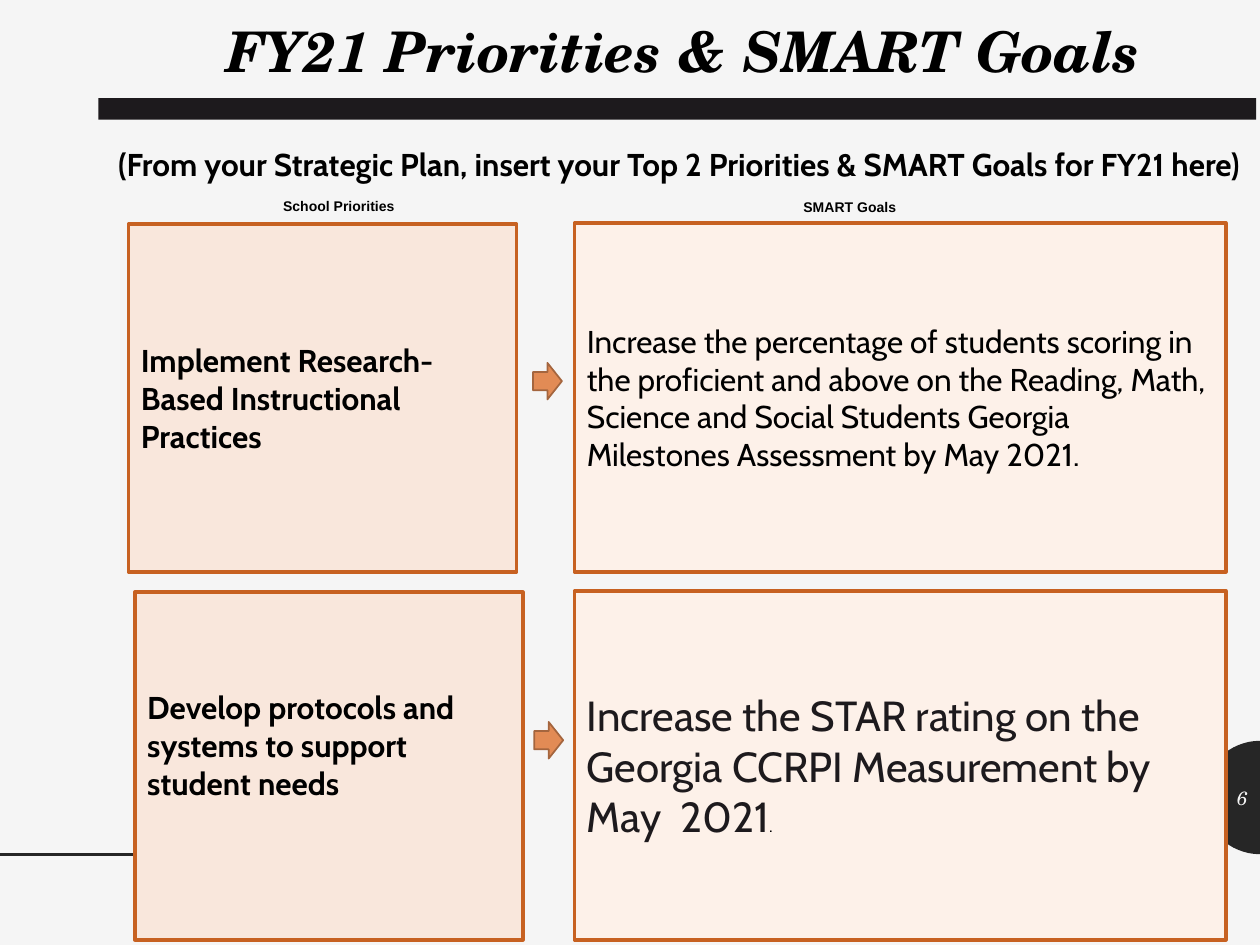
from math import cos, pi, sin

from pptx import Presentation
from pptx.dml.color import RGBColor
from pptx.enum.shapes import MSO_CONNECTOR, MSO_SHAPE
from pptx.enum.text import MSO_ANCHOR as ANCHOR, PP_ALIGN as ALIGN
from pptx.oxml.ns import qn
from pptx.util import Inches, Pt

BACKGROUND = RGBColor(0xF5, 0xF5, 0xF5)
CHARCOAL = RGBColor(0x26, 0x26, 0x26)
INK = RGBColor(0x1D, 0x1A, 0x1D)
BLACK = RGBColor(0, 0, 0)
PRIORITY_FILL = RGBColor(0xF9, 0xE7, 0xDC)
GOAL_FILL = RGBColor(0xFD, 0xF1, 0xE9)
BOX_LINE = RGBColor(0xC7, 0x61, 0x21)
ARROW_FILL = RGBColor(0xE2, 0x8B, 0x55)
ARROW_LINE = RGBColor(0xA4, 0x65, 0x3E)
SERIF, SANS, LABEL = "TeX Gyre Schola", "Cabin", "Arial"


def paint(shape, fill, line=None, width=1):
    shape.shadow.inherit = False
    shape.fill.solid()
    shape.fill.fore_color.rgb = fill
    if line is None:
        shape.line.fill.background()
    else:
        shape.line.color.rgb = line
        shape.line.width = Pt(width)


def write(shape, runs, align=ALIGN.LEFT, anchor=ANCHOR.TOP):
    """Fill one paragraph with runs of (text, size, font, color, bold, italic)."""
    frame = shape.text_frame
    frame.word_wrap = True
    frame.vertical_anchor = anchor
    paragraph = frame.paragraphs[0]
    paragraph.alignment = align
    for text, size, font, color, bold, italic in runs:
        run = paragraph.add_run()
        run.text = text
        run.font.size = Pt(size)
        run.font.name = font
        run.font.color.rgb = color
        run.font.bold = bold
        run.font.italic = italic


prs = Presentation()
prs.slide_width, prs.slide_height = Inches(10), Inches(7.5)
slide = prs.slides.add_slide(prs.slide_layouts[6])
slide.background.fill.solid()
slide.background.fill.fore_color.rgb = BACKGROUND
shapes = slide.shapes

# Half disc behind the page number
STEPS, RADIUS = 32, 0.45
arc = [
    (Inches(10 - RADIUS * sin(pi * i / STEPS)), Inches(6.33 - RADIUS * cos(pi * i / STEPS)))
    for i in range(STEPS + 1)
]
builder = shapes.build_freeform(*arc[0])
builder.add_line_segments(arc[1:], close=True)
paint(builder.convert_to_shape(), CHARCOAL)

footer_rule = shapes.add_connector(
    MSO_CONNECTOR.STRAIGHT, Inches(0), Inches(6.78), Inches(3.69), Inches(6.78))
footer_rule.line.color.rgb = CHARCOAL
footer_rule.line.width = Pt(2)
properties = footer_rule._element.spPr
properties.append(properties.makeelement(qn("a:effectLst"), {}))

title_bar = shapes.add_shape(
    MSO_SHAPE.RECTANGLE, Inches(0.78), Inches(0.78), Inches(9.19), Inches(0.17))
paint(title_bar, INK)

# Headings: left, top, width, height, text, size, font, italic
headings = [
    (0.96, 0.08, 8.93, 0.64, "FY21 Priorities & SMART Goals", 32, SERIF, True),
    (0.78, 1.1, 9.22, 0.71,
     "(From your Strategic Plan, insert your Top 2 Priorities & SMART Goals for FY21 here)",
     18, SANS, False),
    (2.14, 1.52, 1.1, 0.24, "School Priorities", 8, LABEL, False),
    (6.1, 1.53, 1.29, 0.24, "SMART Goals", 8, LABEL, False),
]
for left, top, width, height, text, size, font, italic in headings:
    heading = shapes.add_textbox(Inches(left), Inches(top), Inches(width), Inches(height))
    write(heading, [(text, size, font, BLACK, True, italic)], ALIGN.CENTER)

# Rows: goal top, priority left, arrow left and top, priority, its bottom margin, goal runs
rows = [
    (1.77, 1.02, 4.23, 2.88, "Implement Research-Based Instructional Practices", 0.05,
     [("Increase the percentage of students scoring in the proficient and above on the "
       "Reading, Math, Science and Social Students Georgia Milestones Assessment by May 2021.",
       18, SANS, BLACK, False, False)]),
    (4.69, 1.07, 4.24, 5.73, "Develop protocols and systems to support student needs", 0.38,
     [("Increase the STAR rating on the Georgia CCRPI Measurement by May  2021",
       24, SANS, INK, False, False),
      (".", 10, SANS, BLACK, False, False)]),
]
for top, priority_left, arrow_left, arrow_top, priority, bottom_margin, goal_runs in rows:
    goal_box = shapes.add_shape(
        MSO_SHAPE.RECTANGLE, Inches(4.56), Inches(top), Inches(5.17), Inches(2.77))
    paint(goal_box, GOAL_FILL, BOX_LINE, 2)
    write(goal_box, goal_runs, anchor=ANCHOR.MIDDLE)

    priority_box = shapes.add_shape(
        MSO_SHAPE.RECTANGLE, Inches(priority_left), Inches(top + 0.01), Inches(3.08), Inches(2.76))
    paint(priority_box, PRIORITY_FILL, BOX_LINE, 2)
    write(priority_box, [(priority, 18, SANS, BLACK, True, False)], anchor=ANCHOR.MIDDLE)
    priority_box.text_frame.margin_bottom = Inches(bottom_margin)

    arrow = shapes.add_shape(
        MSO_SHAPE.RIGHT_ARROW, Inches(arrow_left), Inches(arrow_top), Inches(0.23), Inches(0.29))
    paint(arrow, ARROW_FILL, ARROW_LINE)

page_number = shapes.add_textbox(Inches(9.55), Inches(6.13), Inches(0.45), Inches(0.4))
write(page_number, [("6", 11, SERIF, BACKGROUND, False, True)], ALIGN.RIGHT, ANCHOR.MIDDLE)

prs.save("out.pptx")
